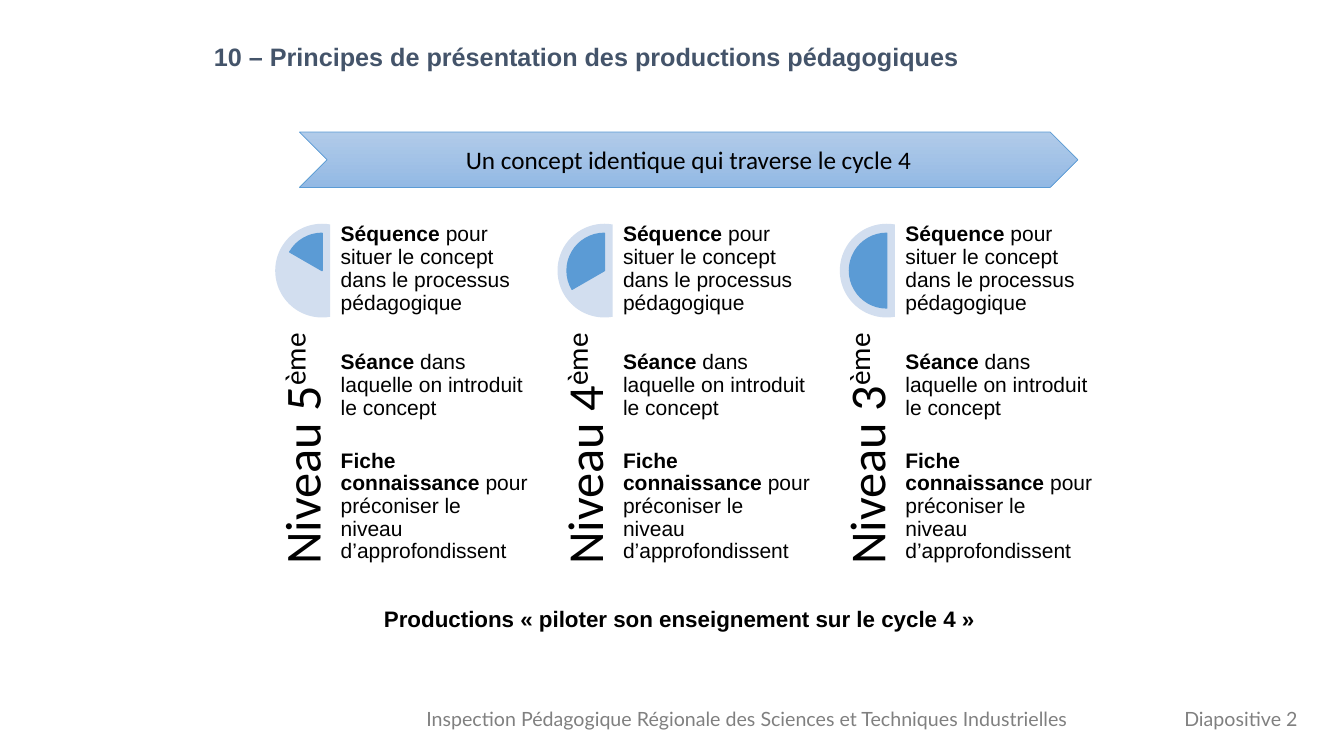
"""Build the slide on presenting teaching material across cycle 4."""
from pptx import Presentation
from pptx.dml.color import RGBColor
from pptx.enum.shapes import MSO_SHAPE
from pptx.enum.text import MSO_ANCHOR, MSO_AUTO_SIZE, PP_ALIGN
from pptx.util import Inches, Pt

LEFT, CENTER, RIGHT = PP_ALIGN.LEFT, PP_ALIGN.CENTER, PP_ALIGN.RIGHT
TOP, MIDDLE, BOTTOM = MSO_ANCHOR.TOP, MSO_ANCHOR.MIDDLE, MSO_ANCHOR.BOTTOM

TITLE = "10 – Principes de présentation des productions pédagogiques"
CONCEPT = "Un concept identique qui traverse le cycle 4"
PRODUCTIONS = "Productions «\u00a0piloter son enseignement sur le cycle 4\u00a0»"
FOOTER = "Inspection Pédagogique Régionale des Sciences et Techniques Industrielles"
PAGE = "Diapositive 2"
LEVELS = [("Niveau 5", 126), ("Niveau 4", 90), ("Niveau 3", 54)]
STEPS = [
    ("Séquence", " pour situer le concept dans le processus pédagogique", 0),
    ("Séance", " dans laquelle on introduit le concept", 26.5),
    ("Fiche connaissance ", "pour préconiser le niveau d’approfondissent", 21.5),
]

BLACK, GREY, NAVY = "000000", "808080", "44546A"
BLUE, PALE_BLUE = "5B9BD5", "D2DEEF"
ARROW_TOP, ARROW_BOTTOM = "B1CBE9", "93B9E4"
FIRST_COLUMN, COLUMN_STEP, COLUMN_TOP = 2.73, 2.8, 2.22
DISC, DISC_INSET = 0.93, 0.095
QUARTER_TURN_END = 162


def rgb(value):
    return RGBColor.from_string(value)


def add_run(paragraph, text, size, font, color, bold=False):
    run = paragraph.add_run()
    run.text = text
    run.font.size = Pt(size)
    run.font.name = font
    run.font.bold = bold
    run.font.color.rgb = rgb(color)
    return run


def set_frame(frame, wrap, anchor=TOP, inset=None):
    frame.word_wrap = wrap
    frame.auto_size = MSO_AUTO_SIZE.NONE
    frame.vertical_anchor = anchor
    if inset is not None:
        frame.margin_left = frame.margin_right = Inches(inset)
        frame.margin_top = frame.margin_bottom = Inches(inset)


def add_box(slide, at, wrap=True, anchor=TOP, inset=None):
    box = slide.shapes.add_textbox(*map(Inches, at))
    set_frame(box.text_frame, wrap, anchor, inset)
    return box


def add_line(slide, at, text, size, font, color, align=LEFT, bold=False):
    paragraph = add_box(slide, at, wrap=False).text_frame.paragraphs[0]
    paragraph.alignment = align
    add_run(paragraph, text, size, font, color, bold)


def add_disc(slide, kind, at, angles, color):
    disc = slide.shapes.add_shape(kind, *map(Inches, at))
    disc.shadow.inherit = False
    for index, angle in enumerate(angles):
        disc.adjustments[index] = angle
    disc.fill.solid()
    disc.fill.fore_color.rgb = rgb(color)
    disc.line.fill.background()
    return disc


def add_level(slide, left, level, start_angle):
    add_disc(slide, MSO_SHAPE.CHORD, (left, COLUMN_TOP, DISC, DISC), (48, 168), PALE_BLUE)
    size = DISC - 2 * DISC_INSET
    progress = add_disc(
        slide, MSO_SHAPE.PIE,
        (left + DISC_INSET, COLUMN_TOP + DISC_INSET, size, size),
        (start_angle, QUARTER_TURN_END), BLUE)
    progress.line.color.rgb = rgb(BLUE)
    progress.line.width = Pt(1)

    label = add_box(slide, (left - 1.07, 4.31, 2.7, 0.56), anchor=BOTTOM, inset=0)
    label.rotation = 270
    paragraph = label.text_frame.paragraphs[0]
    paragraph.alignment = RIGHT
    paragraph.line_spacing = 0.9
    add_run(paragraph, level, 36, "Calibri", BLACK)
    ordinal = add_run(paragraph, "ème ", 36, "Calibri", BLACK)
    ordinal.font._element.set("baseline", "30000")

    steps = add_box(slide, (left + 0.65, COLUMN_TOP, 1.86, 3.72), inset=0).text_frame
    for index, (name, purpose, gap) in enumerate(STEPS):
        paragraph = steps.add_paragraph() if index else steps.paragraphs[0]
        paragraph.line_spacing = 0.9
        if gap:
            paragraph.space_before = Pt(gap)
        add_run(paragraph, name, 15, "Arial", BLACK, bold=True)
        add_run(paragraph, purpose, 15, "Arial", BLACK)


def add_concept_arrow(slide):
    arrow = slide.shapes.add_shape(MSO_SHAPE.CHEVRON, *map(Inches, (2.97, 1.31, 7.72, 0.55)))
    arrow.shadow.inherit = False
    arrow.fill.gradient()
    arrow.fill.gradient_angle = 270
    for stop, color in zip(arrow.fill.gradient_stops, (ARROW_TOP, ARROW_BOTTOM)):
        stop.color.rgb = rgb(color)
    arrow.fill.gradient_stops[0].position = 0
    arrow.fill.gradient_stops[1].position = 1
    arrow.line.color.rgb = rgb(BLUE)
    arrow.line.width = Pt(0.5)
    set_frame(arrow.text_frame, True, MIDDLE)
    paragraph = arrow.text_frame.paragraphs[0]
    paragraph.alignment = CENTER
    add_run(paragraph, CONCEPT, 18, "Calibri", BLACK)


def main():
    deck = Presentation()
    deck.slide_width, deck.slide_height = Inches(13.33), Inches(7.5)
    slide = deck.slides.add_slide(deck.slide_layouts[5])

    title = slide.shapes.title
    title.left, title.top, title.width, title.height = map(Inches, (2.02, 0.36, 7.66, 0.4))
    set_frame(title.text_frame, False)
    heading = title.text_frame.paragraphs[0]
    heading.alignment = LEFT
    add_run(heading, TITLE, 18, "Arial", NAVY, bold=True)

    add_line(slide, (4.13, 6.96, 6.73, 0.34), FOOTER, 14, "Lato", GREY)
    add_line(slide, (11.41, 6.96, 1.56, 0.34), PAGE, 14, "Lato", GREY, RIGHT)
    add_line(slide, (3.67, 5.95, 6.14, 0.37), PRODUCTIONS, 16, "Arial", BLACK, CENTER, True)
    for column, (level, start_angle) in enumerate(LEVELS):
        add_level(slide, FIRST_COLUMN + column * COLUMN_STEP, level, start_angle)
    add_concept_arrow(slide)
    deck.save("out.pptx")


if __name__ == "__main__":
    main()
